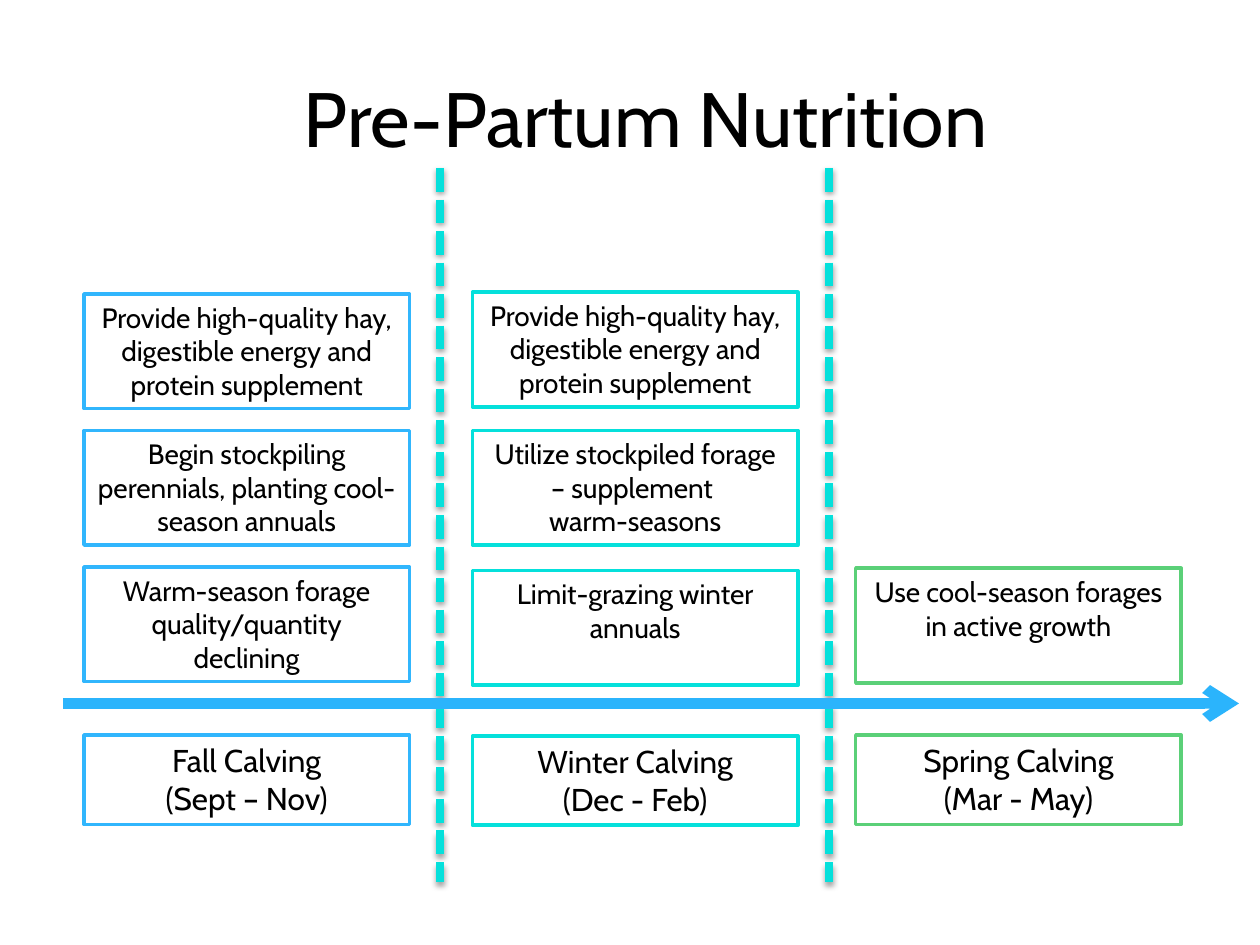
from lxml import etree
from pptx import Presentation
from pptx.dml.color import RGBColor
from pptx.enum.dml import MSO_LINE
from pptx.enum.shapes import MSO_CONNECTOR, MSO_SHAPE
from pptx.enum.text import MSO_ANCHOR, MSO_AUTO_SIZE, PP_ALIGN
from pptx.oxml.ns import qn
from pptx.util import Pt

STRAIGHT = MSO_CONNECTOR.STRAIGHT
RECTANGLE = MSO_SHAPE.RECTANGLE
SYS_DASH = MSO_LINE.SQUARE_DOT
TOP, MIDDLE = MSO_ANCHOR.TOP, MSO_ANCHOR.MIDDLE
GROW = MSO_AUTO_SIZE.SHAPE_TO_FIT_TEXT
CENTER = PP_ALIGN.CENTER

FONT = "Cabin"
BOX_W, STEP_H, SEASON_H = 186, 65.5, 51.1
HAY = "Provide high-quality hay, digestible energy and protein supplement"

# left edge, colour, season (top, text), feeding steps (top, text)
SEASONS = [
    (48, "31B6FD", (420, "Fall Calving\n(Sept – Nov)"), [
        (324, "Warm-season forage quality/quantity declining"),
        (246, "Begin stockpiling perennials, planting cool-season annuals"),
        (168, HAY)]),
    (270, "05E0DB", (420.5, "Winter Calving\n(Dec - Feb)"), [
        (326, "Limit-grazing winter annuals"),
        (246, "Utilize stockpiled forage – supplement \nwarm-seasons"),
        (167, HAY)]),
    (489, "5BD078", (420, "Spring Calving\n(Mar - May)"), [
        (324.7, "Use cool-season forages in active growth")]),
]


def rgb(value):
    return RGBColor.from_string(value)


def write(tf, text, size, color="000000", anchor=TOP):
    tf.word_wrap = True
    tf.vertical_anchor = anchor
    for i, line in enumerate(text.split("\n")):
        p = tf.paragraphs[0] if i == 0 else tf.add_paragraph()
        p.alignment = CENTER
        r = p.add_run()
        r.text = line
        r.font.name, r.font.size = FONT, Pt(size)
        r.font.color.rgb = rgb(color)


def add_title(slide, text, left, top, width, height):
    sp = slide.shapes.title
    sp.left, sp.top, sp.width, sp.height = map(Pt, (left, top, width, height))
    write(sp.text_frame, text, 44, anchor=MIDDLE)


def add_box(slide, text, left, top, height, color, size):
    sp = slide.shapes.add_shape(RECTANGLE, Pt(left), Pt(top), Pt(BOX_W), Pt(height))
    sp.shadow.inherit = False
    sp.fill.solid()
    sp.fill.fore_color.rgb = rgb("FFFFFF")
    sp.line.color.rgb = rgb(color)
    sp.line.width = Pt(2)
    write(sp.text_frame, text, size)
    sp.text_frame.auto_size = GROW


def add_season(slide, left, color, season, steps):
    top, text = season
    add_box(slide, text, left, top, SEASON_H, color, 18)
    for top, text in steps:
        add_box(slide, text, left, top, STEP_H, color, 16)


def add_line(slide, x1, y1, x2, y2, color, width):
    """Return the connector and its empty effect list."""
    line = slide.shapes.add_connector(STRAIGHT, Pt(x1), Pt(y1), Pt(x2), Pt(y2))
    line.line.color.rgb = rgb(color)
    line.line.width = Pt(width)
    effects = etree.SubElement(line._element.spPr, qn("a:effectLst"))
    return line, effects


def add_divider(slide, x, top, bottom):
    line, effects = add_line(slide, x, top, x, bottom, "05E0DB", 4.5)
    line.line.dash_style = SYS_DASH
    shadow = etree.SubElement(effects, qn("a:outerShdw"), blurRad=str(Pt(3.1)),
                              dist=str(Pt(1.8)), dir="5400000", rotWithShape="0")
    color = etree.SubElement(shadow, qn("a:srgbClr"), val="000000")
    etree.SubElement(color, qn("a:alpha"), val="35000")


def add_timeline(slide, left, right, y):
    line, _ = add_line(slide, left, y, right, y, "2BB4FC", 6)
    etree.SubElement(line.line._get_or_add_ln(), qn("a:tailEnd"), type="arrow")


def main():
    prs = Presentation()
    prs.slide_width, prs.slide_height = Pt(720), Pt(540)
    slide = prs.slides.add_slide(prs.slide_layouts[5])
    add_title(slide, "Pre-Partum Nutrition ", 64, 21.6, 620, 90)
    for x in (251.3, 473.8):
        add_divider(slide, x, 96, 504)
    add_timeline(slide, 36, 708, 402)
    for season in SEASONS:
        add_season(slide, *season)
    prs.save("out.pptx")


if __name__ == "__main__":
    main()
